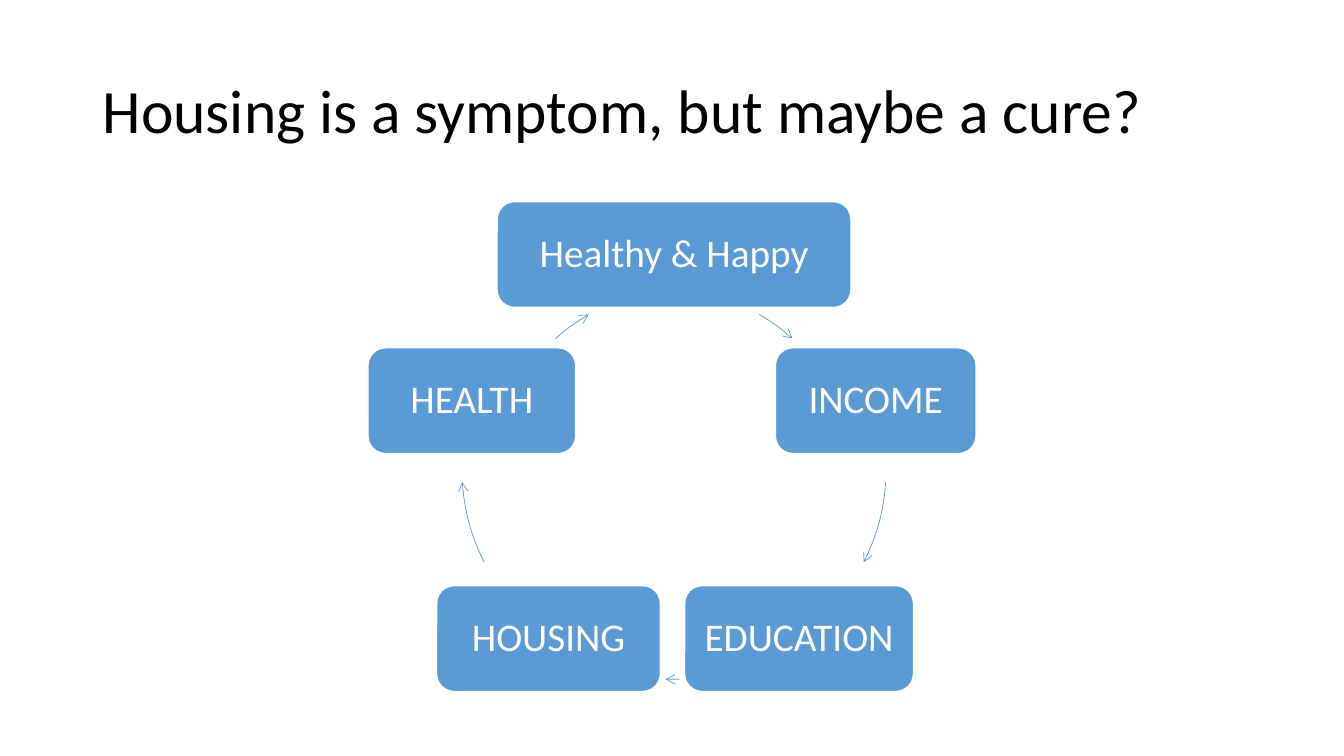
from dataclasses import dataclass

from lxml import etree
from pptx import Presentation
from pptx.dml.color import RGBColor
from pptx.enum.shapes import MSO_SHAPE as SHAPE
from pptx.enum.text import MSO_ANCHOR as ANCHOR, PP_ALIGN as ALIGN
from pptx.oxml.ns import qn
from pptx.util import Emu, Pt

PX = 9144  # 100 px to the inch
BLUE, WHITE, BLACK = "5B9BD5", "FFFFFF", "000000"
BOX_H = 105
RING = 421  # diameter of the circle the arrows follow


@dataclass
class Stage:
    """A box of the cycle and the arc arrow leading out of it."""
    label: str
    x: int
    y: int
    w: int
    ring_x: int
    ring_y: int
    start: float  # degrees, clockwise from three o'clock
    end: float


STAGES = [
    Stage("Healthy & Happy", 493, 200, 351, 436, 283, 300.4, 311.5),
    Stage("INCOME", 769, 345, 199, 458, 253, 4, 26.6),
    Stage("EDUCATION", 679, 581, 227, 458, 253, 88.5, 92.3),
    Stage("HOUSING", 433, 581, 222, 458, 253, 153.4, 176),
    Stage("HEALTH", 365, 345, 206, 480, 283, 228.5, 239.6),
]


def px(n: int) -> Emu:
    return Emu(n * PX)


def rgb(color: str) -> RGBColor:
    return RGBColor.from_string(color)


def write(sp, text: str, size: int, color: str, align, margin: int) -> None:
    tf = sp.text_frame
    frame = dict(word_wrap=True, vertical_anchor=ANCHOR.MIDDLE,
                 margin_left=px(margin), margin_right=px(margin))
    for name, value in frame.items():
        setattr(tf, name, value)
    p = tf.paragraphs[0]
    p.alignment, p.line_spacing = align, 0.9
    r = p.add_run()
    r.text = text
    for name, value in dict(name="Calibri", size=Pt(size)).items():
        setattr(r.font, name, value)
    r.font.color.rgb = rgb(color)


def add_outlined(slide, kind, box: tuple, color: str, width: float):
    sp = slide.shapes.add_shape(kind, *map(px, box))
    sp.shadow.inherit = False
    sp.line.color.rgb = rgb(color)
    sp.line.width = Pt(width)
    return sp


def add_box(slide, stage: Stage) -> None:
    sp = add_outlined(slide, SHAPE.ROUNDED_RECTANGLE,
                      (stage.x, stage.y, stage.w, BOX_H), WHITE, 1)
    sp.fill.solid()
    sp.fill.fore_color.rgb = rgb(BLUE)
    write(sp, stage.label, 28, WHITE, ALIGN.CENTER, 5)


def add_arc_arrow(slide, stage: Stage) -> None:
    sp = add_outlined(slide, SHAPE.ARC,
                      (stage.ring_x, stage.ring_y, RING, RING), BLUE, 0.5)
    sp.fill.background()
    # Arc angles are stored in 1/60000 degree, adjustments in 1/100000
    for i, angle in enumerate((stage.start, stage.end)):
        sp.adjustments[i] = angle * 0.6
    ln = sp.element.spPr.find(qn("a:ln"))
    etree.SubElement(ln, qn("a:tailEnd"), type="arrow")


def main() -> None:
    prs = Presentation()
    prs.slide_width, prs.slide_height = px(1333), px(750)
    s = prs.slides.add_slide(prs.slide_layouts[6])

    # Title
    title = s.shapes.add_textbox(*map(px, (92, 40, 1150, 145)))
    write(title, "Housing is a symptom, but maybe a cure?", 44, BLACK,
          ALIGN.LEFT, 10)

    # Cycle
    for stage in STAGES:
        add_box(s, stage)
        add_arc_arrow(s, stage)

    prs.save("out.pptx")


if __name__ == "__main__":
    main()
